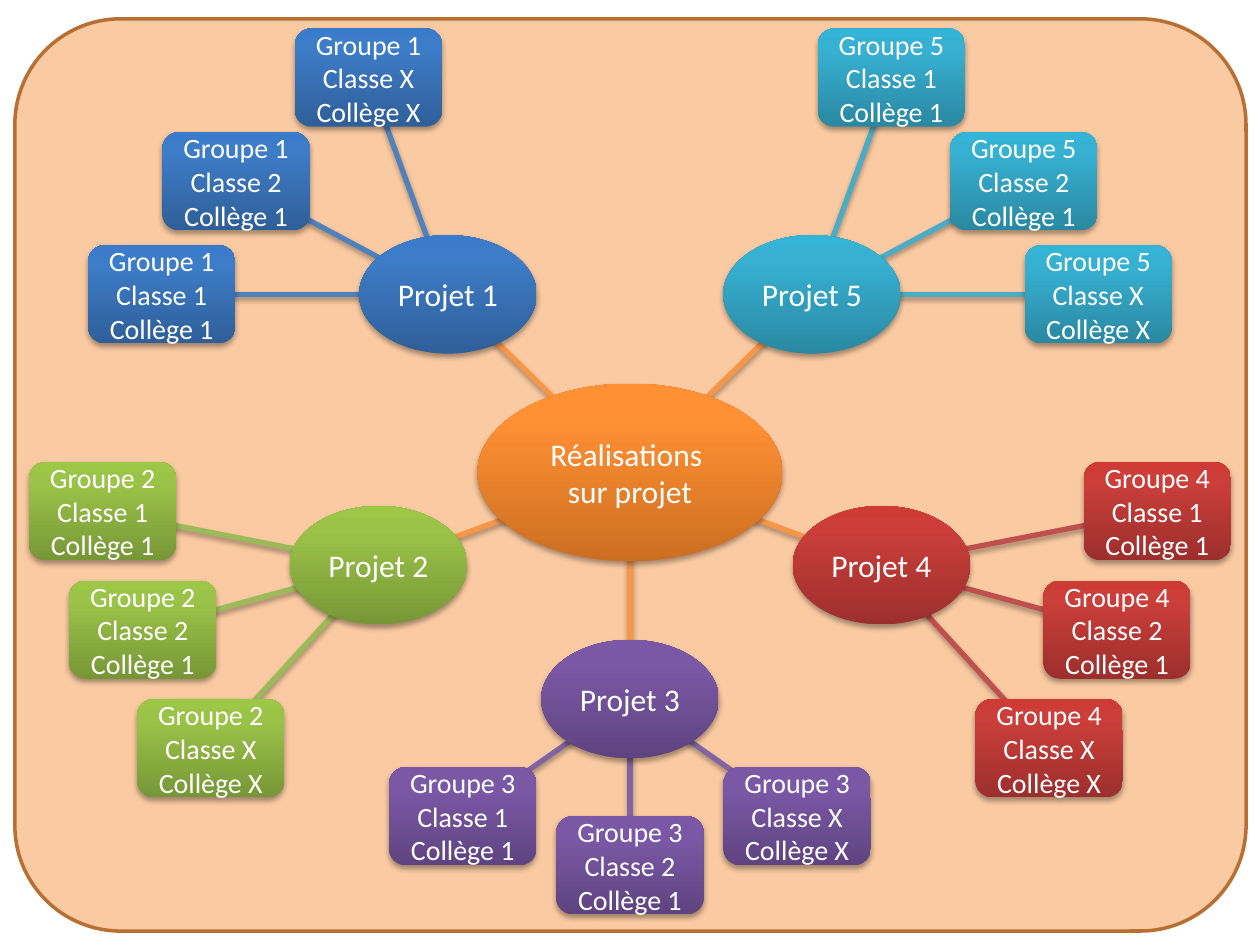
from copy import deepcopy
from dataclasses import dataclass

from lxml import etree
from pptx import Presentation, util as u
from pptx.dml.color import RGBColor
from pptx.enum import shapes, text
from pptx.oxml import ns


@dataclass(frozen=True)
class Theme:
    """Colours and type sizes of the slide."""
    font: str = "Calibri"
    ink: str = "FFFFFF"
    edge: str = "B76F34"
    large: int = 18
    small: int = 16
    orange: tuple = ("F79646", "CC6E20", "FF9034", "FF9136")
    blue: tuple = ("4F81BD", "2F5F99", "3D7CC7", "3A7CCB")
    green: tuple = ("9BBB59", "779737", "9BC348", "9DC746")
    violet: tuple = ("8064A2", "5F4480", "7B58A6", "7C57A8")
    red: tuple = ("C0504D", "9C2F2D", "CB3E3A", "CE3B37")
    teal: tuple = ("4BACC6", "2A88A2", "37B1D2", "34B4D6")


THEME = Theme()
OVAL, ROUND = shapes.MSO_SHAPE.OVAL, shapes.MSO_SHAPE.ROUNDED_RECTANGLE
HUB, PROJECT, GROUP = (6.15, 3.58), (3.58, 2.39), (2.97, 1.98)

HIGH = [(-1.6, -4.37), (-4.27, -2.28), (-5.77, 0)]
LOW = [(-5.56, -1.09), (-4.75, 1.3), (-3.38, 3.69)]
BASE = [(-3.37, 2.36), (0, 3.35), (3.37, 2.36)]
BRANCHES = [
    (1, (-3.67, -3.59), HIGH, "X21", THEME.blue),
    (2, (-5.07, 1.87), LOW, "12X", THEME.green),
    (3, (0, 4.57), BASE, "12X", THEME.violet),
    (4, (5.07, 1.87), [(-x, y) for x, y in LOW], "12X", THEME.red),
    (5, (3.67, -3.59), [(-x, y) for x, y in HIGH], "12X", THEME.teal),
]


def rgb(code):
    """Turn a hex code into a colour."""
    return RGBColor.from_string(code)


def shift(mid, step):
    """Move a point by a step."""
    return mid[0] + step[0], mid[1] + step[1]


def sub(node, tag, **attrs):
    """Add a DrawingML child with attributes."""
    return etree.SubElement(node, ns.qn(tag), attrs)


def shade(effects):
    """Put a soft drop shadow in an effect list."""
    drop = sub(effects, "a:outerShdw", blurRad="40000", dist="23000",
               dir="5400000", rotWithShape="0")
    sub(sub(drop, "a:srgbClr", val="000000"), "a:alpha", val="35000")


def link(slide, start, end, tone):
    """Draw a line between two points."""
    line = slide.shapes.add_connector(
        shapes.MSO_CONNECTOR.STRAIGHT, *map(u.Cm, (*start, *end)))
    line.line.color.rgb = rgb(tone[0])
    line.line.width = u.Pt(3)
    shade(sub(line._element.spPr, "a:effectLst"))


def blend(shape, tone):
    """Fill a shape with a three-stop gradient, dark at the bottom."""
    shape.fill.gradient()
    shape.fill.gradient_angle = 90
    stops = shape._element.spPr.find(".//" + ns.qn("a:gsLst"))
    stops.append(deepcopy(stops[-1]))
    for stop, place, code in zip(shape.fill.gradient_stops, (0, 0.8, 1), tone[1:]):
        stop.position = place
        stop.color.rgb = rgb(code)


def node(slide, kind, mid, size, tone, paras, points):
    """Draw a labelled node round its centre; each paragraph is a list of lines."""
    left, top = mid[0] - size[0] / 2, mid[1] - size[1] / 2
    shape = slide.shapes.add_shape(kind, *map(u.Cm, (left, top, *size)))
    blend(shape, tone)
    shape.line.fill.background()
    shape.shadow.inherit = False
    shade(shape._element.spPr.find(ns.qn("a:effectLst")))
    frame = shape.text_frame
    frame.word_wrap = True
    frame.vertical_anchor = text.MSO_ANCHOR.MIDDLE
    for i, lines in enumerate(paras):
        para = frame.add_paragraph() if i else frame.paragraphs[0]
        para.alignment = text.PP_ALIGN.CENTER
        for j, words in enumerate(lines):
            if j:
                para.add_line_break()
            run = para.add_run()
            run.text = words
            run.font.name = THEME.font
            run.font.size = u.Pt(points)
            run.font.color.rgb = rgb(THEME.ink)


def panel(slide, box):
    """Draw the rounded backdrop in its box."""
    shape = slide.shapes.add_shape(ROUND, *map(u.Cm, box))
    shape.adjustments[0] = 0.116
    shape.fill.solid()
    shape.fill.fore_color.rgb = rgb(THEME.orange[0])
    color = shape._element.spPr.find(ns.qn("a:solidFill"))[0]
    sub(color, "a:alpha", val="50000")
    shape.line.color.rgb = rgb(THEME.edge)
    shape.line.width = u.Pt(2)
    shape.shadow.inherit = False


def branch(slide, mid, number, steps, marks, tone):
    """Draw a project and its groups round the project's centre."""
    spots = [shift(mid, step) for step in steps]
    for spot in spots:
        link(slide, mid, spot, tone)
    node(slide, OVAL, mid, PROJECT, tone, [[f"Projet {number}"]], THEME.large)
    for spot, mark in zip(spots, marks):
        school = "X" if mark == "X" else "1"
        label = [[f"Groupe {number}"], [f"Classe {mark}"], [f"Collège {school}"]]
        node(slide, ROUND, spot, GROUP, tone, label, THEME.small)


def mind_map(slide, box):
    """Draw the hub and its branches round the middle of the box."""
    left, top, width, height = box
    mid = left + width / 2, top + height / 2
    for _, step, *_ in BRANCHES:
        link(slide, mid, shift(mid, step), THEME.orange)
    for number, step, steps, marks, tone in BRANCHES:
        branch(slide, shift(mid, step), number, steps, marks, tone)
    node(slide, OVAL, mid, HUB, THEME.orange,
         [["Réalisations ", "sur projet"]], THEME.large)


def main():
    """Build and save the deck."""
    deck = Presentation()
    deck.slide_width, deck.slide_height = u.Cm(25.4), u.Cm(19.05)
    slide = deck.slides.add_slide(deck.slide_layouts[6])
    panel(slide, (0.3, 0.38, 24.82, 18.39))
    mind_map(slide, (0, 0, 25.4, 19.05))
    deck.save("out.pptx")


if __name__ == "__main__":
    main()
